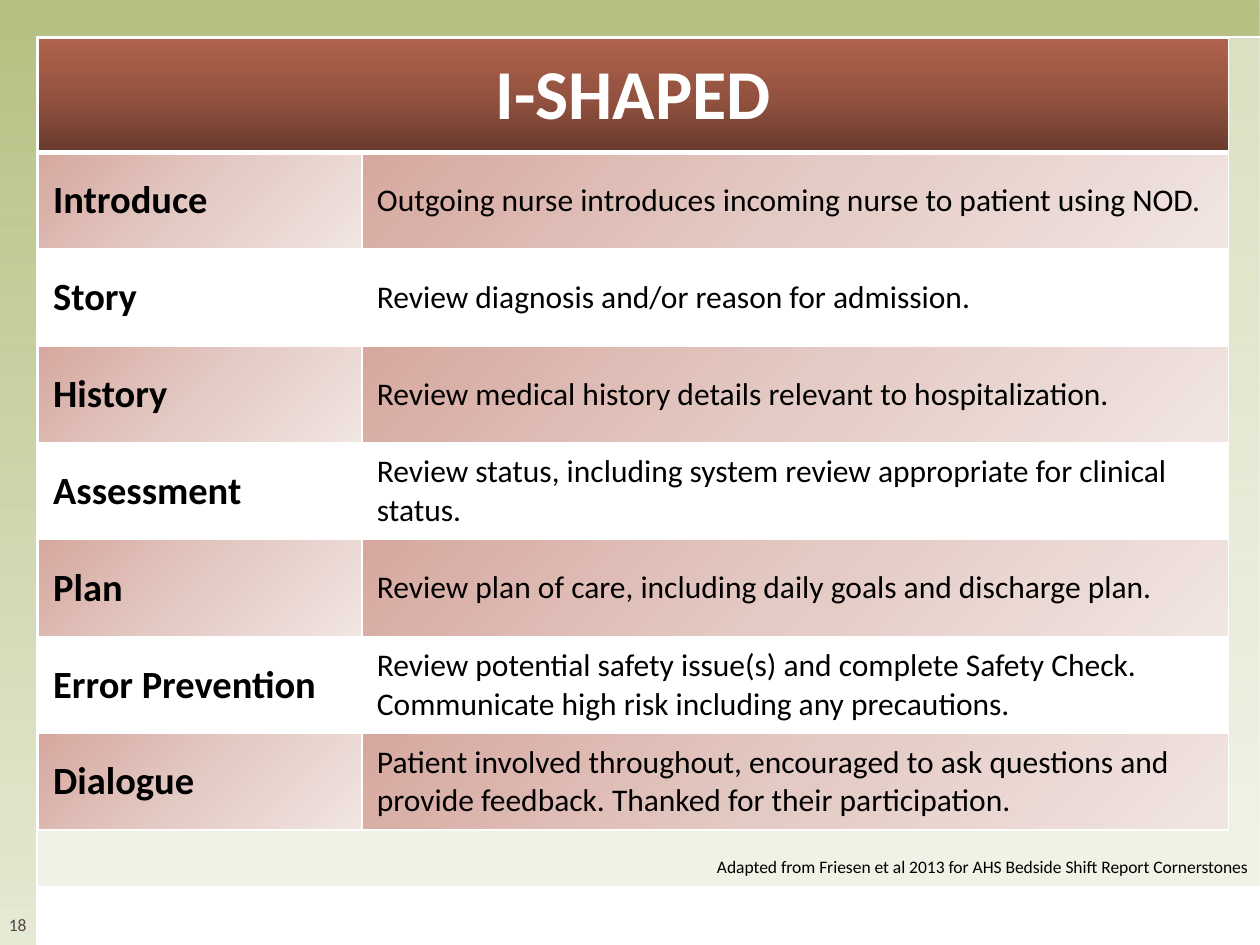
"""Build the I-SHAPED bedside shift report slide."""
from lxml import etree
from pptx import Presentation
from pptx import util as u
from pptx.dml.color import RGBColor
from pptx.enum import shapes, text
from pptx.oxml.ns import qn

TITLE = "I-SHAPED"
STEPS = [
    ("Introduce", "Outgoing nurse introduces incoming nurse to patient using NOD."),
    ("Story", "Review diagnosis and/or reason for admission."),
    ("History", "Review medical history details relevant to hospitalization."),
    ("Assessment", "Review status, including system review appropriate for clinical status."),
    ("Plan", "Review plan of care, including daily goals and discharge plan."),
    ("Error Prevention", "Review potential safety issue(s) and complete Safety Check. "
                         "Communicate high risk including any precautions."),
    ("Dialogue", "Patient involved throughout, encouraged to ask questions and "
                 "provide feedback. Thanked for their participation."),
]
SOURCE = "Adapted from Friesen et al 2013 for AHS Bedside Shift Report Cornerstones"
PAGE = "18"

COLORS = {"white": "FFFFFF", "black": "000000", "green": "9EAC58", "page": "514746"}
BACKDROP = (90, [(0, COLORS["green"], 75), (50, COLORS["green"], 50), (100, COLORS["green"], 25)])
HEADER = (270, [(0, "683A2D", 100), (50, "945340", 100), (100, "B0624B", 100)])
BAND = (45, [(0, "D6A89F", 100), (50, "E4CAC4", 100), (100, "F1E5E2", 100)])

WIDTH, HEIGHT = 720, 540
PANEL_LEFT, PANEL_TOP, PANEL_WIDTH = 21, 21, 699.6
FOOTER_TOP, FOOTER_HEIGHT = 506.2, 33.8
TABLE_LEFT, TABLE_TOP = 21.8, 21.8
COLUMNS = (185, 495.2)
HEADER_HEIGHT, STEP_HEIGHT = 65.2, 55.35


def add_color(parent, color, alpha=100):
    node = etree.SubElement(parent, qn("a:srgbClr"), val=color)
    if alpha < 100:
        etree.SubElement(node, qn("a:alpha"), val=str(alpha * 1000))


def set_gradient(fill, properties, gradient):
    angle, stops = gradient
    fill.gradient()
    node = properties.find(qn("a:gradFill"))
    for child in list(node):
        node.remove(child)
    stop_list = etree.SubElement(node, qn("a:gsLst"))
    for position, color, alpha in stops:
        stop = etree.SubElement(stop_list, qn("a:gs"), pos=str(position * 1000))
        add_color(stop, color, alpha)
    etree.SubElement(node, qn("a:lin"), ang=str(angle * 60000), scaled="0")


def set_solid(fill, color):
    fill.solid()
    fill.fore_color.rgb = RGBColor.from_string(color)


def add_rectangle(slide, left, top, width, height):
    shape = slide.shapes.add_shape(
        shapes.MSO_SHAPE.RECTANGLE, u.Pt(left), u.Pt(top), u.Pt(width), u.Pt(height))
    shape.shadow.inherit = False
    shape.line.fill.background()
    return shape


def set_text(frame, content, size, color, align, bold=False):
    frame.text = content
    frame.word_wrap = True
    paragraph = frame.paragraphs[0]
    paragraph.alignment = align
    font = paragraph.runs[0].font
    font.name, font.size, font.bold = "Calibri", u.Pt(size), bold
    font.color.rgb = RGBColor.from_string(color)


def add_label(slide, box, content, color, align, anchor, margins):
    shape = slide.shapes.add_textbox(*map(u.Pt, box))
    frame = shape.text_frame
    set_text(frame, content, 10, color, align)
    frame.vertical_anchor = anchor
    frame.margin_left, frame.margin_top, frame.margin_right, frame.margin_bottom = map(u.Pt, margins)


def set_borders(cell, bottom):
    properties = cell._tc.get_or_add_tcPr()
    for index, (side, width) in enumerate((("L", 1), ("R", 1), ("T", 1), ("B", bottom))):
        line = etree.Element(qn("a:ln" + side), w=str(u.Pt(width)))
        add_color(etree.SubElement(line, qn("a:solidFill")), COLORS["white"])
        properties.insert(index, line)


def style_cell(cell, content, size, color, align, bold, gradient, padding, bottom=1):
    set_text(cell.text_frame, content, size, color, align, bold)
    cell.vertical_anchor = text.MSO_ANCHOR.MIDDLE
    cell.margin_left = cell.margin_right = u.Pt(8.64)
    cell.margin_top = cell.margin_bottom = u.Pt(padding)
    if gradient:
        set_gradient(cell.fill, cell._tc.get_or_add_tcPr(), gradient)
    else:
        set_solid(cell.fill, COLORS["white"])
    set_borders(cell, bottom)


def add_background(slide):
    backdrop = add_rectangle(slide, -0.6, 0, WIDTH + 0.6, HEIGHT)
    set_gradient(backdrop.fill, backdrop._element.spPr, BACKDROP)
    panel = add_rectangle(slide, PANEL_LEFT, PANEL_TOP, PANEL_WIDTH, 518.4)
    set_solid(panel.fill, COLORS["white"])
    tint = panel._element.spPr.find(qn("a:solidFill"))
    tint.remove(tint[0])
    add_color(tint, COLORS["white"], 50)
    set_solid(panel.line.fill, COLORS["white"])
    panel.line.width = u.Pt(1)
    footer = add_rectangle(slide, PANEL_LEFT, FOOTER_TOP, PANEL_WIDTH, FOOTER_HEIGHT)
    set_solid(footer.fill, COLORS["white"])


def add_steps_table(slide):
    heights = [HEADER_HEIGHT] + [STEP_HEIGHT] * len(STEPS)
    table = slide.shapes.add_table(
        len(heights), len(COLUMNS), u.Pt(TABLE_LEFT), u.Pt(TABLE_TOP),
        u.Pt(sum(COLUMNS)), u.Pt(sum(heights))).table
    for column, width in zip(table.columns, COLUMNS):
        column.width = u.Pt(width)
    for row, height in zip(table.rows, heights):
        row.height = u.Pt(height)
    table.cell(0, 0).merge(table.cell(0, 1))
    style_cell(table.cell(0, 0), TITLE, 40, COLORS["white"], text.PP_ALIGN.CENTER,
               True, HEADER, 8.64, bottom=3)
    set_borders(table.cell(0, 1), 3)
    for row, step in enumerate(STEPS, 1):
        for column, (content, size, bold) in enumerate(zip(step, (22, 18), (True, False))):
            style_cell(table.cell(row, column), content, size, COLORS["black"],
                       text.PP_ALIGN.LEFT, bold, BAND if row % 2 else None, 5.76)


def main():
    presentation = Presentation()
    presentation.slide_width, presentation.slide_height = u.Pt(WIDTH), u.Pt(HEIGHT)
    slide = presentation.slides.add_slide(presentation.slide_layouts[6])
    add_background(slide)
    add_label(slide, (0, FOOTER_TOP, 20.2, FOOTER_HEIGHT), PAGE, COLORS["page"],
              text.PP_ALIGN.CENTER, text.MSO_ANCHOR.BOTTOM, (0, 2.9, 0, 5.8))
    add_steps_table(slide)
    add_label(slide, (0, 485.3, WIDTH, 19.4), SOURCE, COLORS["black"],
              text.PP_ALIGN.RIGHT, text.MSO_ANCHOR.MIDDLE, (7.2, 3.6, 7.2, 3.6))
    presentation.save("out.pptx")


if __name__ == "__main__":
    main()
